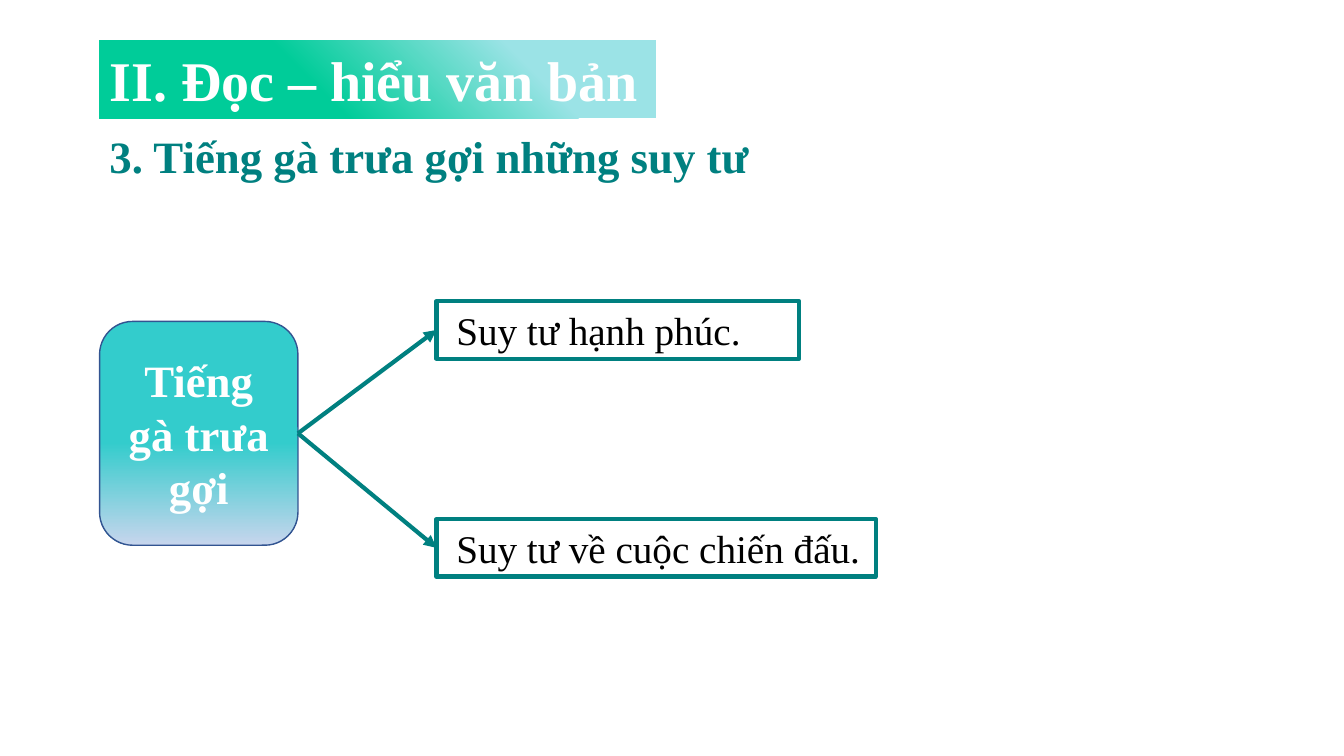
from dataclasses import dataclass

from lxml import etree
from pptx import Presentation
from pptx import util as u
from pptx.dml.color import RGBColor
from pptx.enum import shapes, text
from pptx.oxml import ns

FONT = "Times New Roman"
WHITE = RGBColor(0xFF, 0xFF, 0xFF)
BLACK = RGBColor(0, 0, 0)
TEAL = RGBColor(0x00, 0x80, 0x80)
GREEN = RGBColor(0x00, 0xCC, 0x99)
PALE_AQUA = RGBColor(0x9B, 0xE3, 0xE6)
TURQUOISE = RGBColor(0x33, 0xCC, 0xCC)
PALE_BLUE = RGBColor(0xC7, 0xD5, 0xED)
NAVY = RGBColor(0x32, 0x54, 0x91)
LEFT = u.Cm(2.51)
BRANCH_LEFT = u.Cm(11)
BRANCH_HEIGHT = u.Cm(1.45)


@dataclass(frozen=True)
class Branch:
    wording: str
    top: u.Length
    width: u.Length


BRANCHES = [
    Branch("Suy tư hạnh phúc.", u.Cm(7.59), u.Cm(9.14)),
    Branch("Suy tư về cuộc chiến đấu.", u.Cm(13.08), u.Cm(11.07)),
]


def write(shape, wording: str, size: int, color: RGBColor, bold: bool = True,
          align=text.PP_ALIGN.LEFT, anchor=text.MSO_ANCHOR.TOP):
    frame = shape.text_frame
    frame.text = wording
    frame.word_wrap = True
    frame.auto_size = text.MSO_AUTO_SIZE.NONE
    frame.vertical_anchor = anchor
    paragraph = frame.paragraphs[0]
    paragraph.alignment = align
    font = paragraph.font
    font.name, font.size, font.bold = FONT, u.Pt(size), bold
    font.color.rgb = color
    return paragraph


def fill_gradient(shape, angle: float, *stops: tuple[float, RGBColor]) -> None:
    """Fill with two colour stops; the angle runs counter-clockwise."""
    shape.fill.gradient()
    shape.fill.gradient_angle = angle
    for stop, (position, color) in zip(shape.fill.gradient_stops, stops):
        stop.position = position
        stop.color.rgb = color


def outline(shape, color: RGBColor, width: float) -> None:
    shape.line.color.rgb = color
    shape.line.width = u.Pt(width)


def add_heading(slide) -> None:
    title = slide.shapes.title
    title.left, title.top = LEFT, u.Cm(1.02)
    title.width, title.height = u.Cm(14.02), u.Cm(1.96)
    fill_gradient(title, 225, (0.24, PALE_AQUA), (0.61, GREEN))
    write(title, "II. Đọc – hiểu văn bản", 40, WHITE)

    subtitle = slide.shapes.add_textbox(LEFT, u.Cm(2.92), u.Cm(29.41), u.Cm(1.7))
    paragraph = write(subtitle, "3. Tiếng gà trưa gợi những suy tư", 32, TEAL)
    paragraph.line_spacing = 1.15
    paragraph.space_after = u.Pt(10)


def add_root(slide):
    root = slide.shapes.add_shape(shapes.MSO_SHAPE.ROUNDED_RECTANGLE,
                                  LEFT, u.Cm(8.1), u.Cm(5), u.Cm(5.64))
    root.shadow.inherit = False
    fill_gradient(root, 270, (0.54, TURQUOISE), (1, PALE_BLUE))
    outline(root, NAVY, 1)
    write(root, "Tiếng gà trưa gợi", 32, WHITE,
          align=text.PP_ALIGN.CENTER, anchor=text.MSO_ANCHOR.MIDDLE)
    return root


def add_branch(slide, branch: Branch):
    box = slide.shapes.add_shape(shapes.MSO_SHAPE.RECTANGLE, BRANCH_LEFT,
                                 branch.top, branch.width, BRANCH_HEIGHT)
    box.shadow.inherit = False
    box.fill.background()
    outline(box, TEAL, 3)
    write(box, branch.wording, 28, BLACK, bold=False, align=text.PP_ALIGN.JUSTIFY)
    box.text_frame.margin_left = u.Cm(0.5)
    return box


def add_arrow(slide, root, box) -> None:
    arrow = slide.shapes.add_connector(shapes.MSO_CONNECTOR.STRAIGHT, 0, 0, 0, 0)
    arrow.begin_connect(root, 3)
    arrow.end_connect(box, 1)
    outline(arrow, TEAL, 3)
    etree.SubElement(arrow.line._get_or_add_ln(), ns.qn("a:tailEnd"), type="triangle")
    etree.SubElement(arrow._element.spPr, ns.qn("a:effectLst"))


def main() -> None:
    deck = Presentation()
    deck.slide_width, deck.slide_height = u.Cm(33.87), u.Cm(19.05)
    slide = deck.slides.add_slide(deck.slide_layouts[5])
    add_heading(slide)
    root = add_root(slide)
    for branch in BRANCHES:
        add_arrow(slide, root, add_branch(slide, branch))
    deck.save("out.pptx")


if __name__ == "__main__":
    main()
